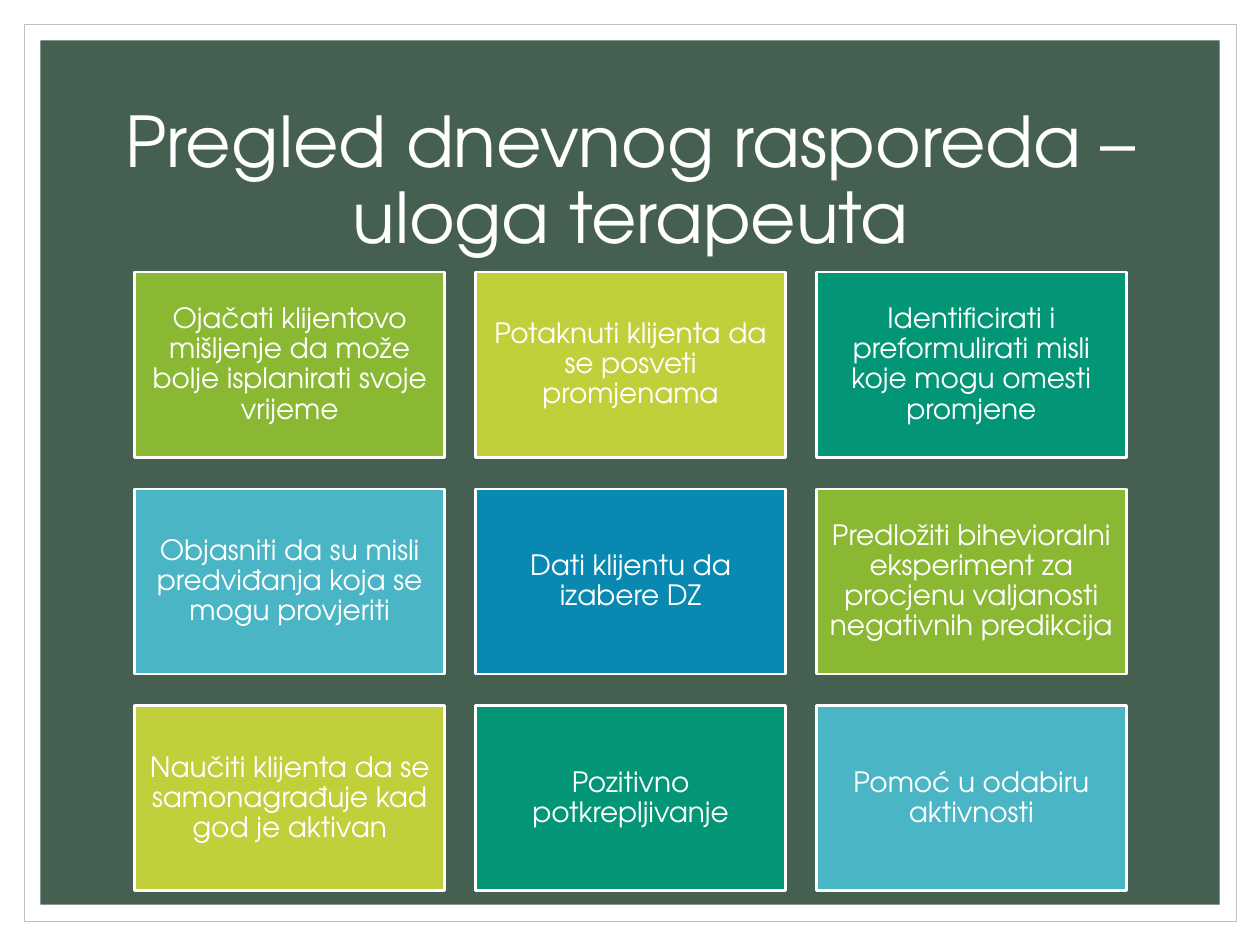
from pptx import Presentation
from pptx.dml.color import RGBColor
from pptx.enum.shapes import MSO_SHAPE
from pptx.enum.text import MSO_ANCHOR, MSO_AUTO_SIZE, PP_ALIGN
from pptx.util import Inches, Pt

RECT = MSO_SHAPE.RECTANGLE
MIDDLE = MSO_ANCHOR.MIDDLE
NO_FIT = MSO_AUTO_SIZE.NONE
CENTER = PP_ALIGN.CENTER

FONT = "TeX Gyre Adventor"
WHITE = "FFFFFF"
GREEN = "455F51"
GREY = "BFBFBF"
CARD_COLORS = ["8AB833", "C0CF3A", "029676", "4AB5C4", "0989B1"]
TITLE = "Pregled dnevnog rasporeda – uloga terapeuta"
CARDS = [
    "Ojačati klijentovo mišljenje da može bolje isplanirati svoje vrijeme",
    "Potaknuti klijenta da se posveti promjenama",
    "Identificirati i preformulirati misli koje mogu omesti promjene",
    "Objasniti da su misli predviđanja koja se mogu provjeriti",
    "Dati klijentu da izabere DZ",
    "Predložiti bihevioralni eksperiment za procjenu valjanosti negativnih predikcija",
    "Naučiti klijenta da se samonagrađuje kad god je aktivan",
    "Pozitivno potkrepljivanje",
    "Pomoć u odabiru aktivnosti",
]
COLUMNS = 3
CARD_W, CARD_H = 2.46, 1.47
LEFT, TOP = 1.07, 2.16
STEP_X, STEP_Y = 2.705, 1.72


def rgb(color):
    return RGBColor.from_string(color)


def add_rect(slide, x, y, w, h, fill, line=None, width=0):
    sp = slide.shapes.add_shape(RECT, Inches(x), Inches(y), Inches(w), Inches(h))
    sp.shadow.inherit = False
    sp.fill.solid()
    sp.fill.fore_color.rgb = rgb(fill)
    if line:
        sp.line.color.rgb = rgb(line)
        sp.line.width = Pt(width)
    else:
        sp.line.fill.background()
    return sp


def set_text(sp, text, size):
    tf = sp.text_frame
    tf.word_wrap = True
    tf.auto_size = NO_FIT
    tf.vertical_anchor = MIDDLE
    p = tf.paragraphs[0]
    p.alignment = CENTER
    p.line_spacing = 0.9
    r = p.add_run()
    r.text = text
    r.font.name = FONT
    r.font.size = Pt(size)
    r.font.color.rgb = rgb(WHITE)


def add_title(slide, text):
    sp = slide.shapes.title
    sp.left, sp.top = Inches(0.88), Inches(0.7)
    sp.width, sp.height = Inches(8.25), Inches(1.5)
    set_text(sp, text, 40)
    sp.element.getparent().append(sp.element)


def add_card(slide, index, text):
    row, col = divmod(index, COLUMNS)
    color = CARD_COLORS[index % len(CARD_COLORS)]
    sp = add_rect(slide, LEFT + col * STEP_X, TOP + row * STEP_Y,
                  CARD_W, CARD_H, color, WHITE, 1.5)
    tf = sp.text_frame
    tf.margin_left = tf.margin_right = Inches(0.07)
    tf.margin_top = tf.margin_bottom = Inches(0.07)
    set_text(sp, text, 16)


def main():
    prs = Presentation()
    prs.slide_width, prs.slide_height = Inches(10), Inches(7.5)
    slide = prs.slides.add_slide(prs.slide_layouts[5])
    add_rect(slide, 0.19, 0.19, 9.62, 7.12, WHITE, GREY, 0.5)
    add_rect(slide, 0.32, 0.32, 9.36, 6.86, GREEN)
    add_title(slide, TITLE)
    for index, text in enumerate(CARDS):
        add_card(slide, index, text)
    prs.save("out.pptx")


if __name__ == "__main__":
    main()
